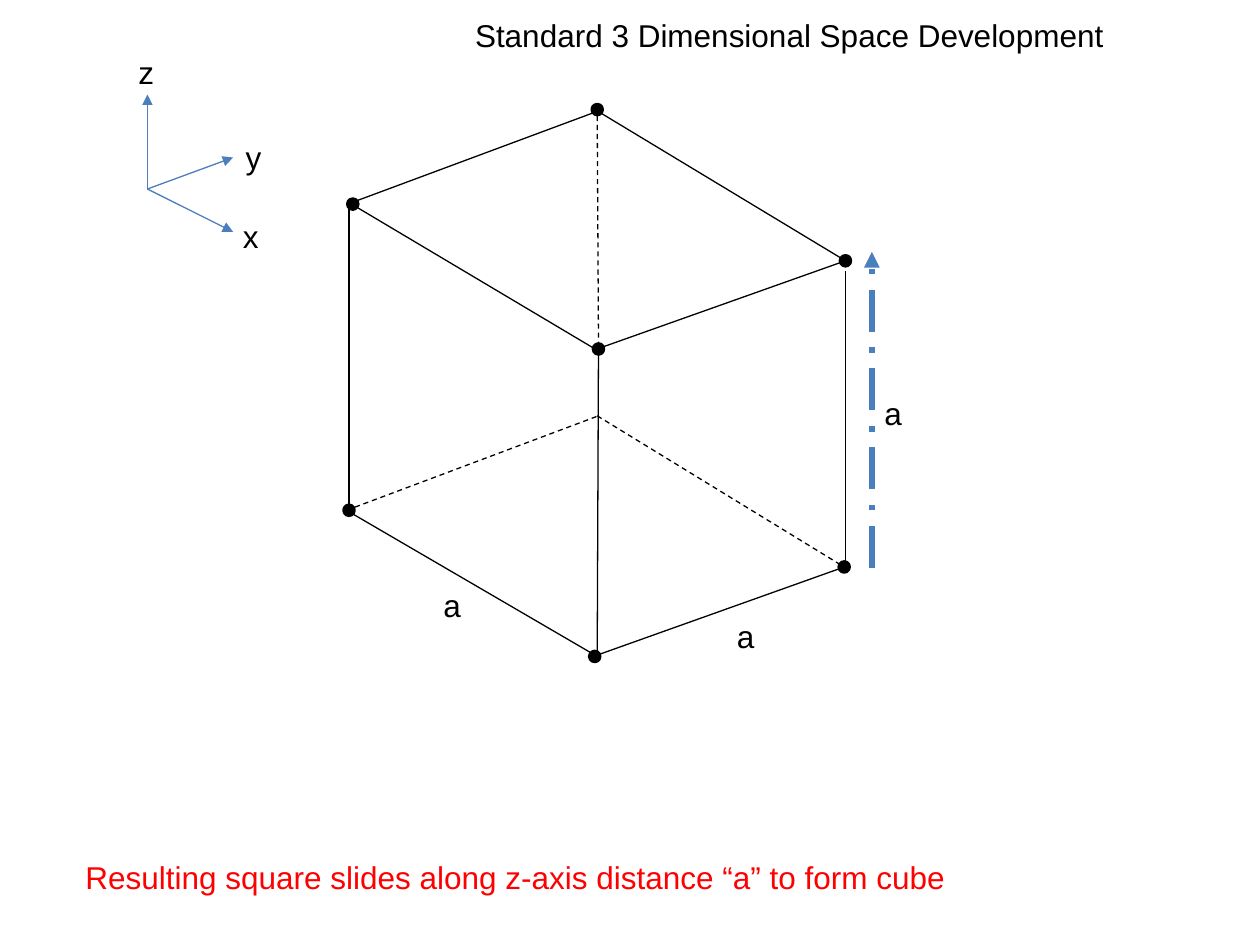
from dataclasses import dataclass

from lxml.etree import SubElement
from pptx import Presentation
from pptx.dml.color import RGBColor as RGB
from pptx.enum.dml import MSO_LINE as Dash
from pptx.enum.shapes import MSO_CONNECTOR as Link, MSO_SHAPE as Form
from pptx.enum.text import MSO_ANCHOR as Anchor, MSO_AUTO_SIZE as Fit, PP_ALIGN as Align
from pptx.oxml.ns import qn
from pptx.util import Inches, Pt


@dataclass(frozen=True)
class Theme:
    ink: RGB = RGB(0, 0, 0)
    blue: RGB = RGB(0x4B, 0x7E, 0xBC)
    red: RGB = RGB(0xFF, 0, 0)
    font: str = "Arial"
    size: float = 18
    thin: float = 0.75
    rim: float = 2
    thick: float = 3
    dot: float = 0.08


def write(frame, text, *, font, size, color, align=Align.LEFT):
    frame.word_wrap = True
    frame.auto_size = Fit.SHAPE_TO_FIT_TEXT
    frame.vertical_anchor = Anchor.TOP
    par = frame.paragraphs[0]
    par.alignment = align
    run = par.add_run()
    run.text = text
    run.font.name = font
    run.font.size = Pt(size)
    run.font.color.rgb = color


class Board:
    def __init__(self, slide, theme):
        self.slide = slide
        self.theme = theme
        self.shapes = slide.shapes

    def group(self):
        self.shapes = self.slide.shapes.add_group_shape().shapes

    def leave(self):
        self.shapes = self.slide.shapes

    def line(self, start, end, color=None, width=None, dash=None, arrow=False):
        points = [Inches(v) for v in (*start, *end)]
        link = self.shapes.add_connector(Link.STRAIGHT, *points)
        link.line.color.rgb = color or self.theme.ink
        link.line.width = Pt(width or self.theme.thin)
        if dash:
            link.line.dash_style = dash
        if arrow:
            SubElement(link.line._get_or_add_ln(), qn("a:tailEnd"), type="triangle")
        SubElement(link._element.spPr, qn("a:effectLst"))

    def dot(self, left, top):
        side = Inches(self.theme.dot)
        dot = self.shapes.add_shape(Form.OVAL, Inches(left), Inches(top), side, side)
        dot.shadow.inherit = False
        dot.fill.solid()
        dot.fill.fore_color.rgb = self.theme.ink
        dot.line.color.rgb = self.theme.ink
        dot.line.width = Pt(self.theme.rim)

    def style(self, frame, text, color=None):
        look = self.theme
        write(frame, text, font=look.font, size=look.size, color=color or look.ink)

    def title(self, text, left, top, width, height):
        title = self.slide.shapes.title
        title.left, title.top = Inches(left), Inches(top)
        title.width, title.height = Inches(width), Inches(height)
        self.style(title.text_frame, text)

    def label(self, text, left, top, width=0.25, color=None):
        box = self.shapes.add_textbox(Inches(left), Inches(top), Inches(width), Inches(0.4))
        self.style(box.text_frame, text, color)


def main():
    deck = Presentation()
    deck.slide_width, deck.slide_height = Inches(10), Inches(7.5)
    theme = Theme()
    board = Board(deck.slides.add_slide(deck.slide_layouts[5]), theme)
    board.title("Standard 3 Dimensional Space Development", 3.67, 0.08, 6.25, 0.4)

    board.group()
    for tip in ((1.85, 1.84), (1.85, 1.25), (1.17, 0.75)):
        board.line((1.17, 1.5), tip, theme.blue, arrow=True)
    board.leave()

    for start, end, dash in (
        ((2.75, 4.05), (4.74, 5.21), None),
        ((2.75, 4.05), (4.75, 3.3), Dash.DASH),
        ((4.71, 5.21), (6.7, 4.5), None),
        ((4.74, 3.3), (6.7, 4.5), Dash.DASH),
    ):
        board.line(start, end, dash=dash)
    for spot in ((2.73, 4.01), (4.68, 5.17), (6.66, 4.46)):
        board.dot(*spot)
    board.line((6.92, 4.51), (6.92, 2), theme.blue, theme.thick, Dash.LONG_DASH_DOT, True)

    board.group()
    for start, end in (
        ((2.79, 1.62), (4.74, 2.78)),
        ((2.76, 1.62), (4.75, 0.88)),
        ((4.71, 2.78), (6.71, 2.07)),
        ((4.74, 0.88), (6.71, 2.07)),
    ):
        board.line(start, end)
    for spot in ((4.71, 2.73), (2.76, 1.58), (4.7, 0.83), (6.67, 2.03)):
        board.dot(*spot)
    board.leave()

    for start, end, dash in (
        ((2.77, 1.65), (2.77, 4.01), None),
        ((4.75, 2.73), (4.74, 5.21), None),
        ((6.71, 2.15), (6.71, 4.5), None),
        ((4.74, 0.92), (4.75, 2.73), Dash.DASH),
    ):
        board.line(start, end, dash=dash)

    for text, left, top in (
        ("x", 1.83, 1.67),
        ("y", 1.85, 1.05),
        ("z", 1, 0.37),
        ("a", 6.92, 3.08),
        ("a", 3.42, 4.6),
        ("a", 5.75, 4.85),
    ):
        board.label(text, left, top)
    note = "Resulting square slides along z-axis distance “a” to form cube"
    board.label(note, 0.58, 6.76, 7.58, theme.red)
    deck.save("out.pptx")


if __name__ == "__main__":
    main()
